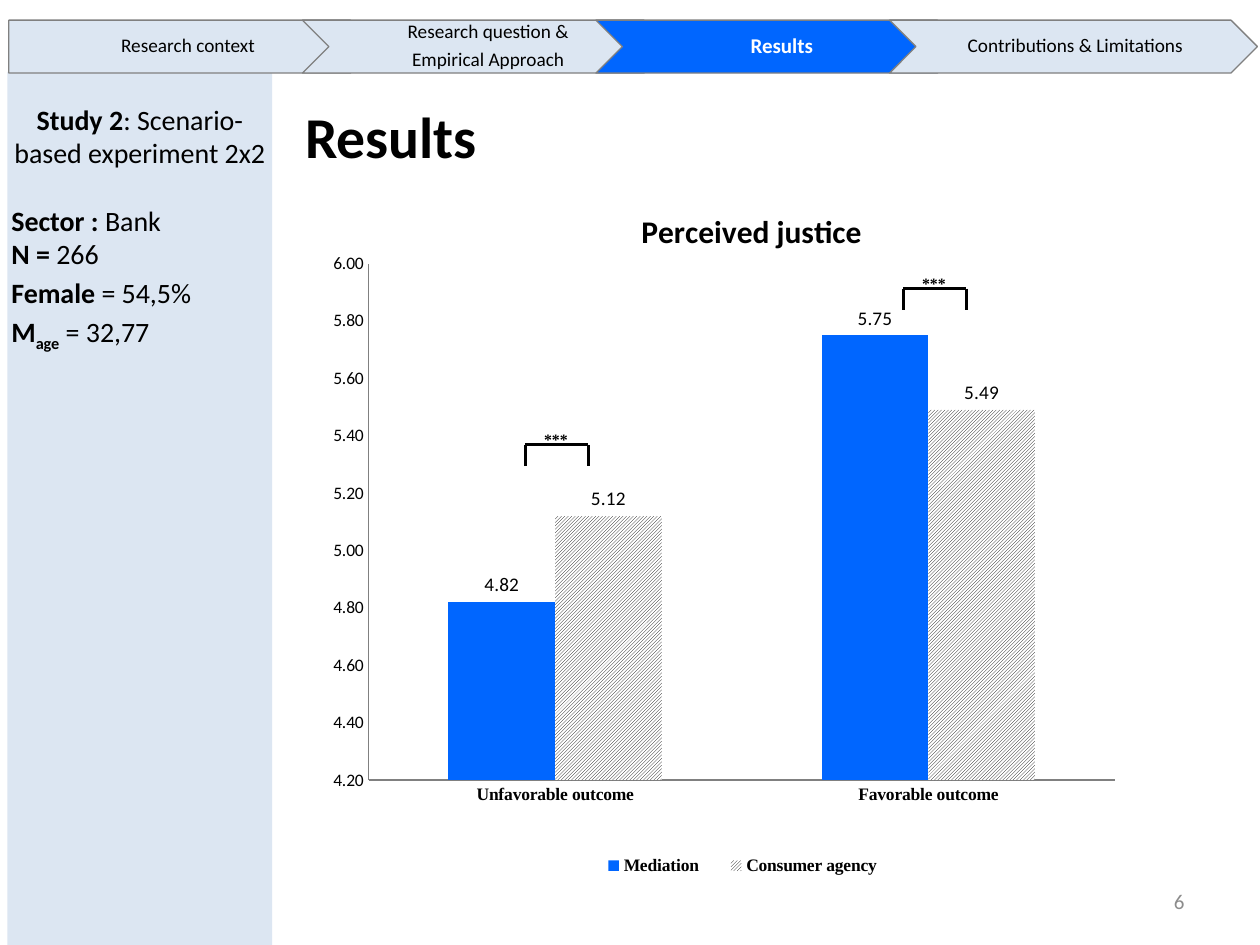
"""Build the slide with the perceived justice results of Study 2."""
from dataclasses import dataclass

from lxml import etree
from pptx import Presentation
from pptx import util as u
from pptx.chart.data import CategoryChartData
from pptx.dml.color import RGBColor
from pptx.enum import chart as ch
from pptx.enum import dml, shapes, text
from pptx.oxml import parse_xml
from pptx.oxml.ns import nsdecls, qn


@dataclass(frozen=True)
class Theme:
    accent: RGBColor = RGBColor(0x00, 0x66, 0xFF)
    pale: RGBColor = RGBColor(0xDC, 0xE6, 0xF2)
    outline: RGBColor = RGBColor(0x80, 0x80, 0x80)
    muted: RGBColor = RGBColor(0x8C, 0x8C, 0x8C)
    black: RGBColor = RGBColor(0, 0, 0)
    white: RGBColor = RGBColor(255, 255, 255)
    sans: str = "Calibri"
    serif: str = "Times New Roman"
    heading: int = 33
    chart_title: int = 18
    body: int = 16
    small: int = 12
    step: int = 11
    axis: int = 10
    stars: int = 9


@dataclass(frozen=True)
class Step:
    lines: str
    kind: shapes.MSO_SHAPE = shapes.MSO_SHAPE.CHEVRON
    active: bool = False


@dataclass(frozen=True)
class Fact:
    label: str
    value: str
    subscript: str = ""
    spacing: float = 1.0
    before: float = 0
    align: text.PP_ALIGN = text.PP_ALIGN.LEFT


@dataclass(frozen=True)
class Bracket:
    left: float
    top: float


THEME = Theme()
STEPS = [
    Step("Research context", shapes.MSO_SHAPE.PENTAGON),
    Step("Research question &\nEmpirical Approach"),
    Step("Results", active=True),
    Step("Contributions & Limitations"),
]
FACTS = [
    Fact("Study 2", ": Scenario- based experiment 2x2", align=text.PP_ALIGN.CENTER),
    Fact("Sector : ", "Bank", before=19.5),
    Fact("N = ", "266"),
    Fact("Female", " = 54,5%", spacing=1.15),
    Fact("M", " = 32,77", subscript="age", spacing=1.15),
]
BRACKETS = [Bracket(4.17, 3.53), Bracket(7.17, 2.29)]


def box(left: float, top: float, width: float, height: float) -> tuple:
    """Return a position and size in inches."""
    return tuple(u.Inches(side) for side in (left, top, width, height))


def place(holder, *bounds: float) -> None:
    """Move and resize a placeholder."""
    holder.left, holder.top, holder.width, holder.height = box(*bounds)


def style(font, size: float, color=THEME.black, bold=False, name=THEME.sans) -> None:
    """Format a font."""
    font.name, font.size, font.bold = name, u.Pt(size), bold
    font.color.rgb = color


def add_label(slide, bounds: tuple, words: str, align=text.PP_ALIGN.LEFT, **look) -> None:
    """Add a one-line text box."""
    frame = slide.shapes.add_textbox(*bounds).text_frame
    frame.word_wrap = True
    frame.text = words
    frame.vertical_anchor = text.MSO_ANCHOR.TOP
    frame.paragraphs[0].alignment = align
    style(frame.paragraphs[0].runs[0].font, **look)


def add_step(slide, index: int, step: Step) -> None:
    """Draw one step of the progress banner."""
    arrow = slide.shapes.add_shape(step.kind, *box(0.07 + 2.33 * index, 0.16, 2.92, 0.42))
    arrow.shadow.inherit = False
    arrow.fill.solid()
    arrow.fill.fore_color.rgb = THEME.accent if step.active else THEME.pale
    arrow.line.color.rgb = THEME.outline
    arrow.line.width = u.Pt(0.75)
    frame = arrow.text_frame
    frame.text = step.lines
    frame.word_wrap = True
    frame.vertical_anchor = text.MSO_ANCHOR.MIDDLE
    frame.margin_left, frame.margin_right = u.Inches(0.05), u.Inches(0.02)
    frame.margin_top = frame.margin_bottom = u.Inches(0.03)
    for line in frame.paragraphs:
        line.alignment = text.PP_ALIGN.CENTER
        line.line_spacing = 0.9
        line.space_after = u.Pt(0 if step.active else 4)
        if step.active:
            style(line.runs[0].font, THEME.small, THEME.white, True)
        else:
            style(line.runs[0].font, THEME.step)


def write_fact(paragraph, fact: Fact) -> None:
    """Write a bold label, an optional subscript and a plain value."""
    paragraph.alignment = fact.align
    paragraph.line_spacing = fact.spacing
    paragraph.space_before = u.Pt(fact.before)
    properties = paragraph._p.get_or_add_pPr()
    properties.set("marL", "0")
    properties.set("indent", "0")
    etree.SubElement(properties, qn("a:buNone"))
    for words, bold in ((fact.label, True), (fact.subscript, True), (fact.value, False)):
        if words:
            run = paragraph.add_run()
            run.text = words
            style(run.font, THEME.body, bold=bold)
            if words == fact.subscript:
                run._r.get_or_add_rPr().set("baseline", "-25000")


def add_sidebar(slide, facts: list[Fact]) -> None:
    """Draw the panel with the study facts."""
    panel = slide.shapes.add_shape(shapes.MSO_SHAPE.RECTANGLE, *box(0.06, 0.57, 2.1, 6.93))
    panel.shadow.inherit = False
    panel.fill.solid()
    panel.fill.fore_color.rgb = THEME.pale
    panel.line.fill.background()
    slide.shapes._spTree.insert(2, panel._element)
    study = slide.placeholders[1]
    place(study, -0.01, 0.76, 2.24, 2.61)
    frame = study.text_frame
    frame.auto_size = text.MSO_AUTO_SIZE.NONE
    for index, fact in enumerate(facts):
        write_fact(frame.add_paragraph() if index else frame.paragraphs[0], fact)


def set_layout(part, index: int, inner=False, **fractions: float) -> None:
    """Give a chart part a fixed place as fractions of the chart."""
    for old in part.findall(qn("c:layout")):
        part.remove(old)
    target = '<c:layoutTarget val="inner"/>' if inner else ""
    modes = "".join(f'<c:{axis}Mode val="edge"/>' for axis in "xy")
    sizes = "".join(f'<c:{key} val="{value}"/>' for key, value in fractions.items())
    part.insert(index, parse_xml(
        f'<c:layout {nsdecls("c")}><c:manualLayout>{target}{modes}{sizes}'
        "</c:manualLayout></c:layout>"))


def add_justice_chart(slide) -> None:
    """Add the clustered columns of perceived justice."""
    data = CategoryChartData(number_format="0.00")
    data.categories = ["Unfavorable outcome", "Favorable outcome"]
    data.add_series("Mediation", (4.82, 5.75))
    data.add_series("Consumer agency", (5.12, 5.49))
    chart = slide.shapes.add_chart(
        ch.XL_CHART_TYPE.COLUMN_CLUSTERED, *box(2.43, 1.39, 7.07, 5.71), data).chart
    style(chart.font, THEME.axis)
    heading = chart.chart_title.text_frame
    heading.text = "Perceived justice"
    style(heading.paragraphs[0].runs[0].font, THEME.chart_title, bold=True)
    set_layout(chart.chart_title._element, 1, x=0.37, y=0.04)

    chart.has_legend = True
    chart.legend.position = ch.XL_LEGEND_POSITION.BOTTOM
    chart.legend.include_in_layout = False
    style(chart.legend.font, THEME.axis, bold=True, name=THEME.serif)
    set_layout(chart.legend._element, 1, x=0.31, y=0.94, w=0.36, h=0.04)

    outcomes, scores = chart.category_axis, chart.value_axis
    for axis in (outcomes, scores):
        axis.has_major_gridlines = False
        axis.major_tick_mark = axis.minor_tick_mark = ch.XL_TICK_MARK.NONE
        axis.format.line.color.rgb = THEME.outline
    style(outcomes.tick_labels.font, THEME.axis, bold=True, name=THEME.serif)
    style(scores.tick_labels.font, THEME.axis)
    scores.minimum_scale, scores.maximum_scale, scores.major_unit = 4.2, 6, 0.2
    scores.tick_labels.number_format = "0.00"
    scores.tick_labels.number_format_is_linked = False

    plot = chart.plots[0]
    plot.gap_width, plot.overlap, plot.vary_by_categories = 150, 0, False
    set_layout(chart._chartSpace.chart.plotArea, 0, True, x=0.07, y=0.123, w=0.838, h=0.718)
    for series in plot.series:
        labels = series.data_labels
        labels.show_value = True
        labels.number_format, labels.number_format_is_linked = "0.00", False
        labels.position = ch.XL_LABEL_POSITION.OUTSIDE_END
        style(labels.font, THEME.step)
    mediation, agency = (series.format.fill for series in plot.series)
    mediation.solid()
    mediation.fore_color.rgb = THEME.accent
    agency.patterned()
    agency.pattern = dml.MSO_PATTERN.DARK_UPWARD_DIAGONAL
    agency.fore_color.rgb, agency.back_color.rgb = THEME.black, THEME.white


def add_bracket(slide, bracket: Bracket) -> None:
    """Draw a significance bracket with its stars."""
    left, top, right, foot = bracket.left, bracket.top, bracket.left + 0.5, bracket.top + 0.17
    corners = [(left, foot), (left, top), (right, top), (right, foot)]
    for start, end in zip(corners, corners[1:]):
        line = slide.shapes.add_connector(
            shapes.MSO_CONNECTOR.STRAIGHT, *(u.Inches(value) for value in start + end))
        line.line.color.rgb = THEME.black
        line.line.width = u.Pt(1.5)
        etree.SubElement(line._element.spPr, qn("a:effectLst"))
    add_label(slide, box(left + 0.05, top - 0.17, 0.44, 0.24), "***",
              size=THEME.stars, bold=True, name=THEME.serif)


def main() -> None:
    """Assemble and save the slide."""
    deck = Presentation()
    deck.slide_width, deck.slide_height = u.Inches(10), u.Inches(7.5)
    slide = deck.slides.add_slide(deck.slide_layouts[1])
    title = slide.shapes.title
    place(title, 1.54, 0.58, 3.13, 0.99)
    title.text_frame.text = "Results"
    style(title.text_frame.paragraphs[0].runs[0].font, THEME.heading, bold=True)
    add_sidebar(slide, FACTS)
    add_justice_chart(slide)
    for bracket in BRACKETS:
        add_bracket(slide, bracket)
    for index, step in enumerate(STEPS):
        add_step(slide, index, step)
    add_label(slide, box(7.17, 7.0, 2.33, 0.3), "6", text.PP_ALIGN.RIGHT,
              size=THEME.small, color=THEME.muted)
    deck.save("out.pptx")


if __name__ == "__main__":
    main()
